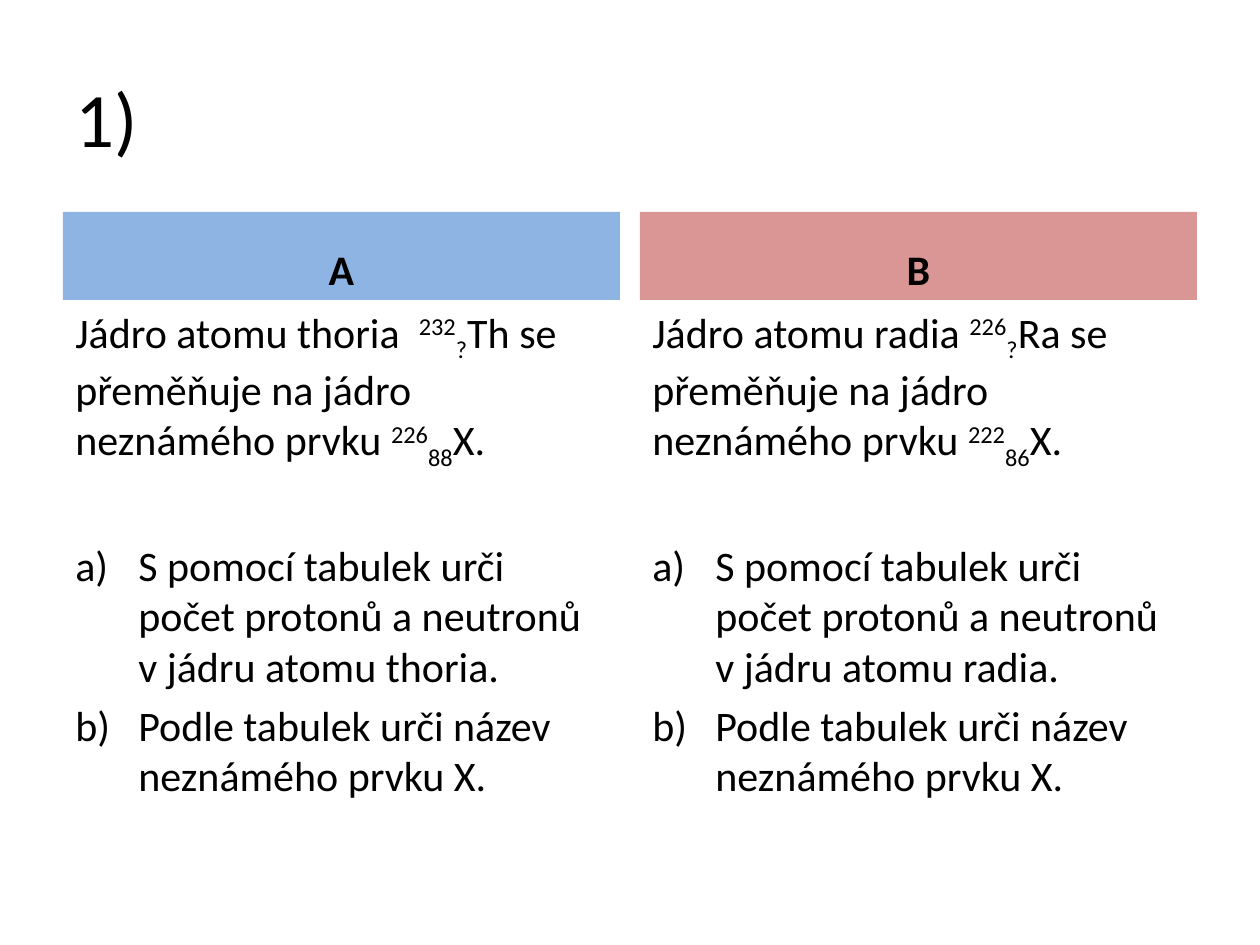
"""Build a slide with two parallel exercises, A and B, on nuclear decay."""
from lxml import etree
from pptx import Presentation
from pptx import util as u
from pptx.dml.color import RGBColor
from pptx.enum import shapes, text
from pptx.oxml.ns import qn

PX = 914400 / 126
BLACK = RGBColor(0x00, 0x00, 0x00)
BLUE = RGBColor(0x8E, 0xB4, 0xE3)
ROSE = RGBColor(0xD9, 0x96, 0x94)
SUP, SUB = 30000, -25000


def px(*nums):
    return [u.Emu(round(n * PX)) for n in nums]


def write(frame, paras, size=24, bold=False, align=text.PP_ALIGN.LEFT,
          anchor=text.MSO_ANCHOR.TOP):
    frame.word_wrap = True
    frame.vertical_anchor = anchor
    for i, (runs, gap, item) in enumerate(paras):
        para = frame.add_paragraph() if i else frame.paragraphs[0]
        para.alignment = align
        para.space_before = u.Pt(gap)
        if item:
            props = para._p.get_or_add_pPr()
            dent = px(63)[0]
            props.set("marL", str(dent))
            props.set("indent", str(-dent))
            etree.SubElement(props, qn("a:buFont"), typeface="+mj-lt")
            etree.SubElement(props, qn("a:buAutoNum"), type="alphaLcParenR")
        for words, base in runs:
            run = para.add_run()
            run.text = words
            font = run.font
            font.name, font.size, font.bold = "Calibri", u.Pt(size), bold
            font.color.rgb = BLACK
            if base:
                font._element.set("baseline", str(base))


deck = Presentation()
deck.slide_width, deck.slide_height = px(1260, 945)
slide = deck.slides.add_slide(deck.slide_layouts[6])

title = slide.shapes.add_textbox(*px(63, 38, 1134, 157))
write(title.text_frame, [([("1)", 0)], 0, False)], size=44,
      anchor=text.MSO_ANCHOR.MIDDLE)

tasks = [
    ("A", BLUE, "thoria", "  ", "232", "Th", "226", "88"),
    ("B", ROSE, "radia", " ", "226", "Ra", "222", "86"),
]
for col, (name, tint, atom, space, mass, sign, new, count) in enumerate(tasks):
    left = 63 + 577 * col
    head = slide.shapes.add_shape(shapes.MSO_SHAPE.RECTANGLE,
                                  *px(left, 212, 557, 88))
    head.shadow.inherit = False
    head.fill.solid()
    head.fill.fore_color.rgb = tint
    head.line.fill.background()
    write(head.text_frame, [([(name, 0)], 4.8, False)], bold=True,
          align=text.PP_ALIGN.CENTER, anchor=text.MSO_ANCHOR.BOTTOM)

    intro = [
        (f"Jádro atomu {atom}{space}", 0), (mass, SUP), ("?", SUB),
        (f"{sign} se přeměňuje na jádro neznámého prvku ", 0),
        (new, SUP), (count, SUB), ("X.", 0),
    ]
    first = f"S pomocí tabulek urči počet protonů a neutronů v jádru atomu {atom}."
    last = "Podle tabulek urči název neznámého prvku X."
    body = slide.shapes.add_textbox(*px(left, 300, 557, 544))
    write(body.text_frame, [(intro, 4.8, False), ([(first, 0)], 39, True),
                            ([(last, 0)], 4.8, True)])

deck.save("out.pptx")
